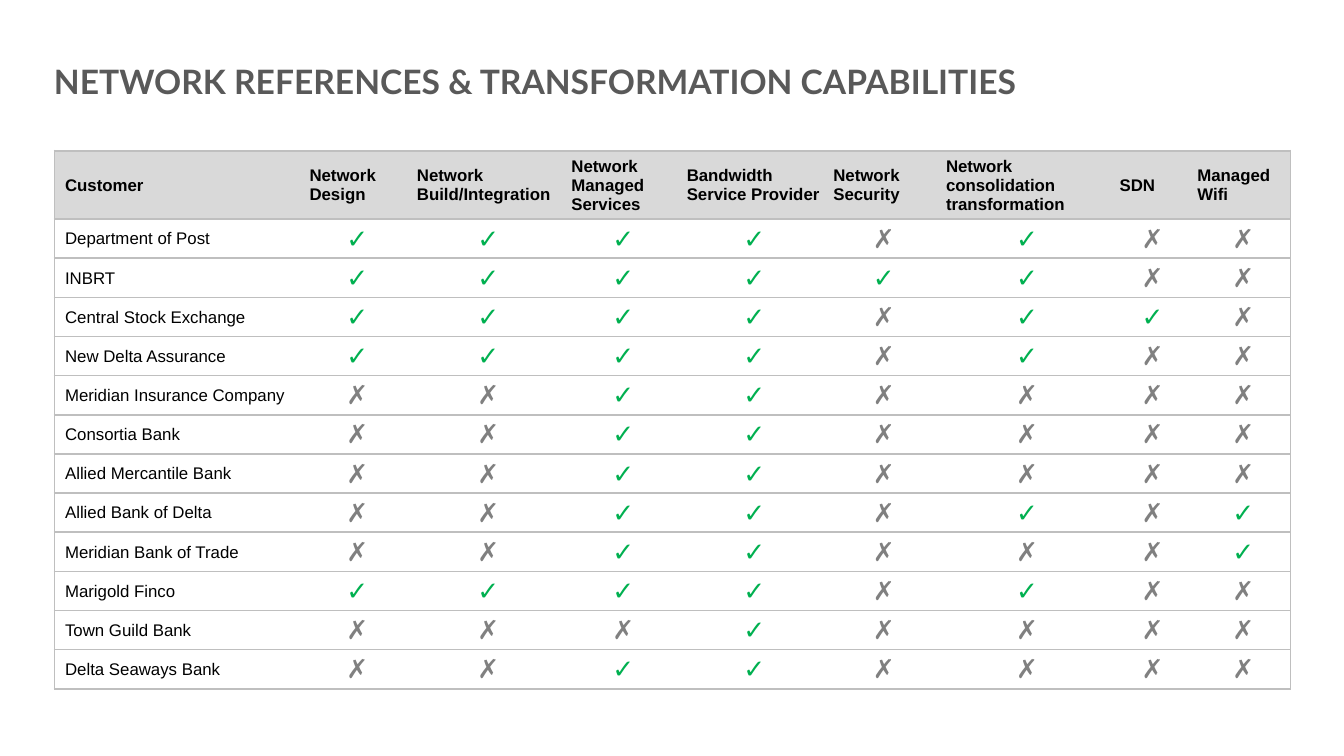
from typing import NamedTuple

from lxml import etree
from pptx import Presentation
from pptx.dml.color import RGBColor
from pptx.enum.text import MSO_ANCHOR, MSO_AUTO_SIZE, PP_ALIGN
from pptx.oxml.ns import qn
from pptx.util import Cm, Pt

LEFT, CENTER = PP_ALIGN.LEFT, PP_ALIGN.CENTER
MIDDLE = MSO_ANCHOR.MIDDLE
NO_FIT = MSO_AUTO_SIZE.NONE
NO_GRID = "{2D5ABB26-0587-4C30-8999-92F81FD0307C}"

COLORS = {
    "title": "595959",
    "text": "000000",
    "head": "D9D9D9",
    "rule": "BFBFBF",
    "✓": "00B050",
    "✗": "808080",
}


class Column(NamedTuple):
    label: str
    width: float


class Client(NamedTuple):
    name: str
    marks: str


class Style(NamedTuple):
    font: dict
    color: str
    align: PP_ALIGN = LEFT


HEAD = Style({"name": "Arial", "size": Pt(9), "bold": True}, "text")
NAME = Style({"name": "Arial", "size": Pt(9), "bold": False}, "text")
MARKS = {
    mark: Style({"name": "Arial", "size": Pt(14), "bold": False}, mark, CENTER)
    for mark in "✓✗"
}
TITLE = Style({"name": "Lato", "size": Pt(18), "bold": True}, "title")

CELL = {
    "margin_left": Cm(0.2),
    "margin_right": Cm(0.02),
    "margin_top": Cm(0.02),
    "margin_bottom": Cm(0),
    "vertical_anchor": MIDDLE,
}
TITLE_BOX = {"left": Cm(1.02), "top": Cm(1.02), "width": Cm(20.93), "height": Cm(1.02)}
TITLE_FRAME = {
    "margin_left": Cm(0),
    "margin_right": Cm(0.25),
    "margin_top": Cm(0.13),
    "margin_bottom": Cm(0.13),
    "vertical_anchor": MIDDLE,
    "auto_size": NO_FIT,
    "word_wrap": True,
}

COLUMNS = [
    Column("Customer", 4.62),
    Column("Network Design", 2.03),
    Column("Network Build/Integration", 2.92),
    Column("Network Managed Services", 2.18),
    Column("Bandwidth Service Provider", 2.77),
    Column("Network Security", 2.13),
    Column("Network consolidation transformation", 3.28),
    Column("SDN", 1.47),
    Column("Managed Wifi", 1.96),
]
CLIENTS = [
    Client("Department of Post", "✓✓✓✓✗✓✗✗"),
    Client("INBRT", "✓✓✓✓✓✓✗✗"),
    Client("Central Stock Exchange", "✓✓✓✓✗✓✓✗"),
    Client("New Delta Assurance", "✓✓✓✓✗✓✗✗"),
    Client("Meridian Insurance Company", "✗✗✓✓✗✗✗✗"),
    Client("Consortia Bank", "✗✗✓✓✗✗✗✗"),
    Client("Allied Mercantile Bank", "✗✗✓✓✗✗✗✗"),
    Client("Allied Bank of Delta", "✗✗✓✓✗✓✗✓"),
    Client("Meridian Bank of Trade", "✗✗✓✓✗✗✗✓"),
    Client("Marigold Finco", "✓✓✓✓✗✓✗✗"),
    Client("Town Guild Bank", "✗✗✗✓✗✗✗✗"),
    Client("Delta Seaways Bank", "✗✗✓✓✗✗✗✗"),
]
HEAD_ROW, BODY_ROW = 1.29, 0.74


def apply(target, values: dict) -> None:
    for key, value in values.items():
        setattr(target, key, value)


def write(frame, text: str, style: Style) -> None:
    frame.text = text
    para = frame.paragraphs[0]
    para.alignment = style.align
    font = para.runs[0].font
    apply(font, style.font)
    font.color.rgb = RGBColor.from_string(COLORS[style.color])


def add_rules(cell, sides: str) -> None:
    props = cell._tc.get_or_add_tcPr()
    for side in sides:
        line = etree.SubElement(props, qn(f"a:ln{side}"), w=str(Pt(1)))
        fill = etree.SubElement(line, qn("a:solidFill"))
        etree.SubElement(fill, qn("a:srgbClr"), val=COLORS["rule"])


def draw_row(table, row: int, texts: list[str], styles: list[Style]) -> None:
    last = len(texts) - 1
    for col, (text, style) in enumerate(zip(texts, styles)):
        cell = table.cell(row, col)
        apply(cell, CELL)
        write(cell.text_frame, text, style)
        add_rules(cell, "LTB" if col == 0 else "RTB" if col == last else "TB")
        if row == 0:
            cell.fill.solid()
            cell.fill.fore_color.rgb = RGBColor.from_string(COLORS["head"])
        else:
            cell.fill.background()


def draw_table(slide) -> None:
    width = sum(column.width for column in COLUMNS)
    height = HEAD_ROW + BODY_ROW * len(CLIENTS)
    table = slide.shapes.add_table(
        len(CLIENTS) + 1, len(COLUMNS), Cm(1.03), Cm(2.85), Cm(width), Cm(height)
    ).table
    table._tbl.tblPr.find(qn("a:tableStyleId")).text = NO_GRID
    table.horz_banding = False
    for part, column in zip(table.columns, COLUMNS):
        part.width = Cm(column.width)
    for index, part in enumerate(table.rows):
        part.height = Cm(BODY_ROW if index else HEAD_ROW)
    draw_row(table, 0, [column.label for column in COLUMNS], [HEAD] * len(COLUMNS))
    for row, client in enumerate(CLIENTS, 1):
        styles = [NAME, *(MARKS[mark] for mark in client.marks)]
        draw_row(table, row, [client.name, *client.marks], styles)


def draw_title(slide, text: str) -> None:
    title = slide.shapes.title
    apply(title, TITLE_BOX)
    apply(title.text_frame, TITLE_FRAME)
    write(title.text_frame, text, TITLE)


def main() -> None:
    deck = Presentation()
    deck.slide_width, deck.slide_height = Cm(25.4), Cm(14.29)
    slide = deck.slides.add_slide(deck.slide_layouts[5])
    draw_table(slide)
    draw_title(slide, "NETWORK REFERENCES & TRANSFORMATION CAPABILITIES")
    deck.save("out.pptx")


if __name__ == "__main__":
    main()
